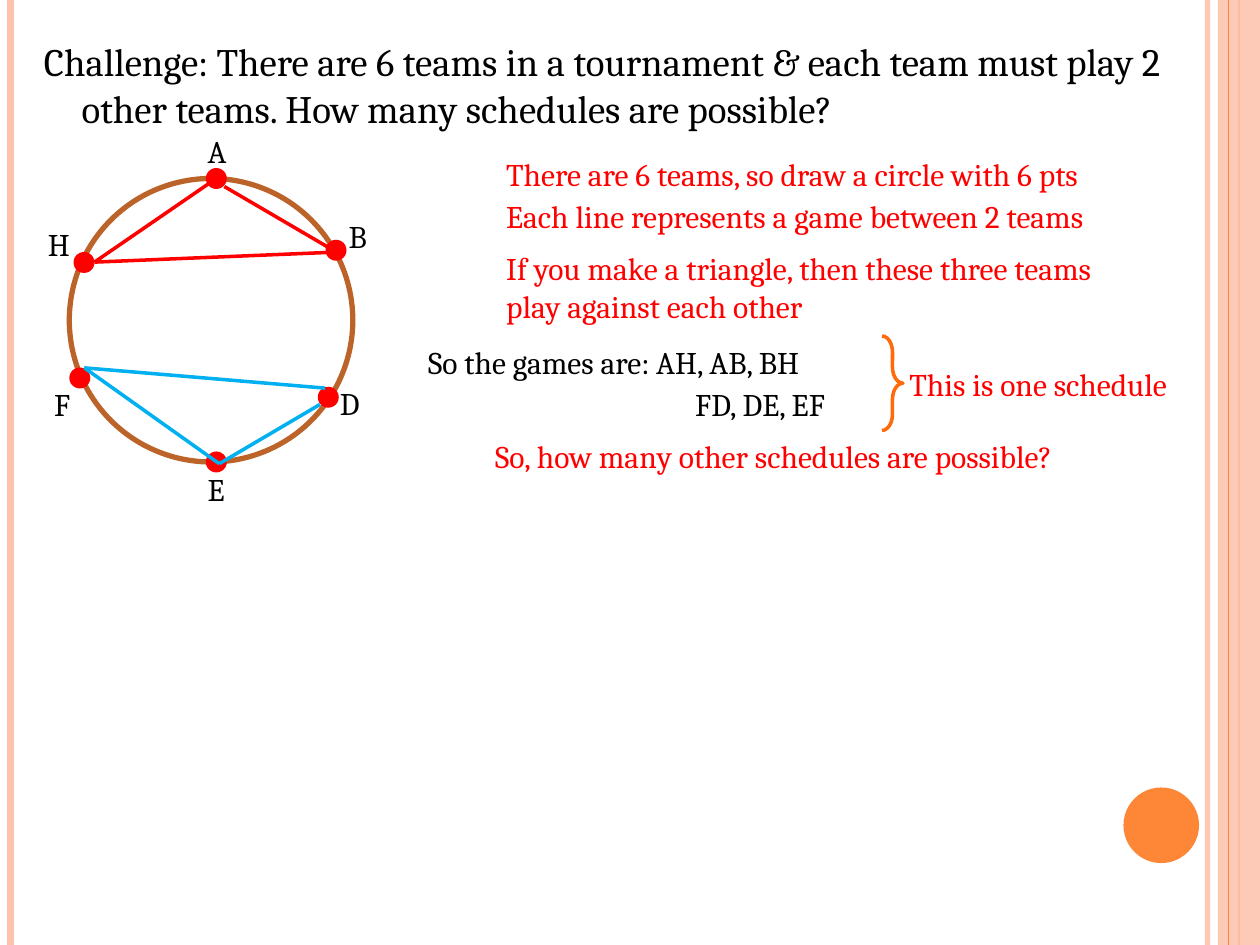
from collections import namedtuple

from lxml.etree import SubElement
from pptx import Presentation
from pptx.dml.color import RGBColor
from pptx.enum.shapes import MSO_CONNECTOR, MSO_SHAPE
from pptx.enum.text import MSO_ANCHOR, MSO_AUTO_SIZE, PP_ALIGN
from pptx.oxml.ns import qn
from pptx.util import Pt

Box = namedtuple("Box", "left top width height")

COLORS = {
    "black": "000000",
    "red": "FF0000",
    "blue": "00B0F0",
    "brown": "BC6329",
    "orange": "FE8637",
    "peach": "FEC3AE",
    "brace": "FF6B0A",
}
FONT = "Cambria"
LINE_HEIGHT = 29.1


def color(name):
    return RGBColor.from_string(COLORS[name])


def set_alpha(fill, percent):
    SubElement(fill.find(".//" + qn("a:srgbClr")), qn("a:alpha"), val=str(percent * 1000))


def add_line(slide, start, end, line_color, width):
    connector = slide.shapes.add_connector(
        MSO_CONNECTOR.STRAIGHT, *[Pt(value) for value in (*start, *end)]
    )
    connector.line.color.rgb = color(line_color)
    connector.line.width = Pt(width)
    SubElement(connector.element.spPr, qn("a:effectLst"))
    return connector


def add_figure(slide, kind, box, fill=None, line=None, width=1):
    shape = slide.shapes.add_shape(kind, *[Pt(value) for value in box])
    shape.shadow.inherit = False
    if fill:
        shape.fill.solid()
        shape.fill.fore_color.rgb = color(fill)
    else:
        shape.fill.background()
    if line:
        shape.line.color.rgb = color(line)
        shape.line.width = Pt(width)
    else:
        shape.line.fill.background()
    return shape


def add_text(slide, box, text, text_color="black", size=18, wrap=False):
    text_box = slide.shapes.add_textbox(*[Pt(value) for value in box])
    frame = text_box.text_frame
    frame_format = {
        "word_wrap": wrap,
        "auto_size": MSO_AUTO_SIZE.NONE if wrap else MSO_AUTO_SIZE.SHAPE_TO_FIT_TEXT,
        "vertical_anchor": MSO_ANCHOR.TOP,
    }
    for name, value in frame_format.items():
        setattr(frame, name, value)
    paragraph = frame.paragraphs[0]
    paragraph.text = text
    paragraph.alignment = PP_ALIGN.LEFT
    for run in paragraph.runs:
        for name, value in {"name": FONT, "size": Pt(size)}.items():
            setattr(run.font, name, value)
        run.font.color.rgb = color(text_color)
    return paragraph


def add_margins(slide, box):
    def add_rule(x, line_color, width):
        return add_line(
            slide, (box.left + x, box.top), (box.left + x, box.top + box.height), line_color, width
        )

    inner_rule = add_rule(690, "peach", 3)
    set_alpha(inner_rule.element.spPr, 93)
    add_rule(6, "peach", 4.5)
    add_rule(708, "orange", 1.5)
    band_box = Box(box.left + 696, box.top, 24, box.height)
    band = add_figure(slide, MSO_SHAPE.RECTANGLE, band_box, "peach")
    set_alpha(band.element.spPr, 87)
    add_rule(702, "orange", 0.75)
    disc_box = Box(box.left + 642, box.top + 450, 43.2, 43.2)
    add_figure(slide, MSO_SHAPE.OVAL, disc_box, "orange")


def add_challenge(slide, box):
    paragraph = add_text(
        slide,
        box,
        "Challenge: There are 6 teams in a tournament & each team must play 2 "
        "other teams. How many schedules are possible?",
        size=22.2,
        wrap=True,
    )
    paragraph.space_before = Pt(6)
    properties = paragraph._p.get_or_add_pPr()
    properties.set("marL", str(Pt(21.6)))
    properties.set("indent", str(Pt(-21.6)))


def add_team_circle(slide, box):
    dot_size = 12
    teams = {
        "A": ((84, 0), (72, -30), 27.4),
        "B": ((152.4, 41), (152.6, 18.2), 27.4),
        "D": ((148, 125), (147.6, 114), 28.8),
        "E": ((84, 162), (72, 163), 27.4),
        "F": ((6, 114), (-15.8, 114.7), 27.4),
        "H": ((8.4, 48), (-19.4, 23.3), 29.5),
    }
    games = [
        ((85.7, -1.2), (14.4, 47.8), "red"),
        ((152.6, 42), (88.6, 4.6), "red"),
        ((154, 42), (14.4, 47.8), "red"),
        ((85.7, 163), (8.6, 108.2), "blue"),
        ((143.3, 129.1), (85.7, 163), "blue"),
        ((146.2, 119.8), (8.6, 108.2), "blue"),
    ]

    def place(point):
        return box.left + point[0], box.top + point[1]

    add_figure(slide, MSO_SHAPE.OVAL, box, line="brown", width=3)
    for center, _, _ in teams.values():
        x, y = place(center)
        dot_box = Box(x - dot_size / 2, y - dot_size / 2, dot_size, dot_size)
        add_figure(slide, MSO_SHAPE.OVAL, dot_box, "red")
    for team, (_, corner, width) in teams.items():
        add_text(slide, Box(*place(corner), width, LINE_HEIGHT), team)
    for start, end, game_color in games:
        add_line(slide, place(start), place(end), game_color, 2)


def add_explanation(slide, box):
    statements = [
        (44.6, 0, 407.5, "There are 6 teams, so draw a circle with 6 pts", "red"),
        (44.6, 23.8, 398.9, "Each line represents a game between 2 teams", "red"),
        (44.6, 54, 404.6,
         "If you make a triangle, then these three teams\nplay against each other", "red"),
        (0, 107.2, 271.4, "So the games are: AH, AB, BH", "black"),
        (152.6, 131.7, 113.8, "FD, DE, EF", "black"),
        (275, 120.2, 183.6, "This is one schedule", "red"),
        (38.2, 161.2, 380.2, "So, how many other schedules are possible?", "red"),
    ]
    for x, y, width, text, text_color in statements:
        height = LINE_HEIGHT + 22 * text.count("\n")
        add_text(slide, Box(box.left + x, box.top + y, width, height), text, text_color)
    brace_box = Box(box.left + 266.4, box.top + 107, 12, 54)
    brace = add_figure(slide, MSO_SHAPE.RIGHT_BRACE, brace_box, line="brace", width=2)
    brace.adjustments[0] = 0.77


def main():
    presentation = Presentation()
    presentation.slide_width = Pt(720)
    presentation.slide_height = Pt(540)
    slide = presentation.slides.add_slide(presentation.slide_layouts[6])
    add_margins(slide, Box(0, 0, 720, 540))
    add_challenge(slide, Box(18, 18, 666, 66))
    add_team_circle(slide, Box(39.6, 102, 162, 162))
    add_explanation(slide, Box(237.6, 85, 458.6, 190.3))
    presentation.save("out.pptx")


if __name__ == "__main__":
    main()
